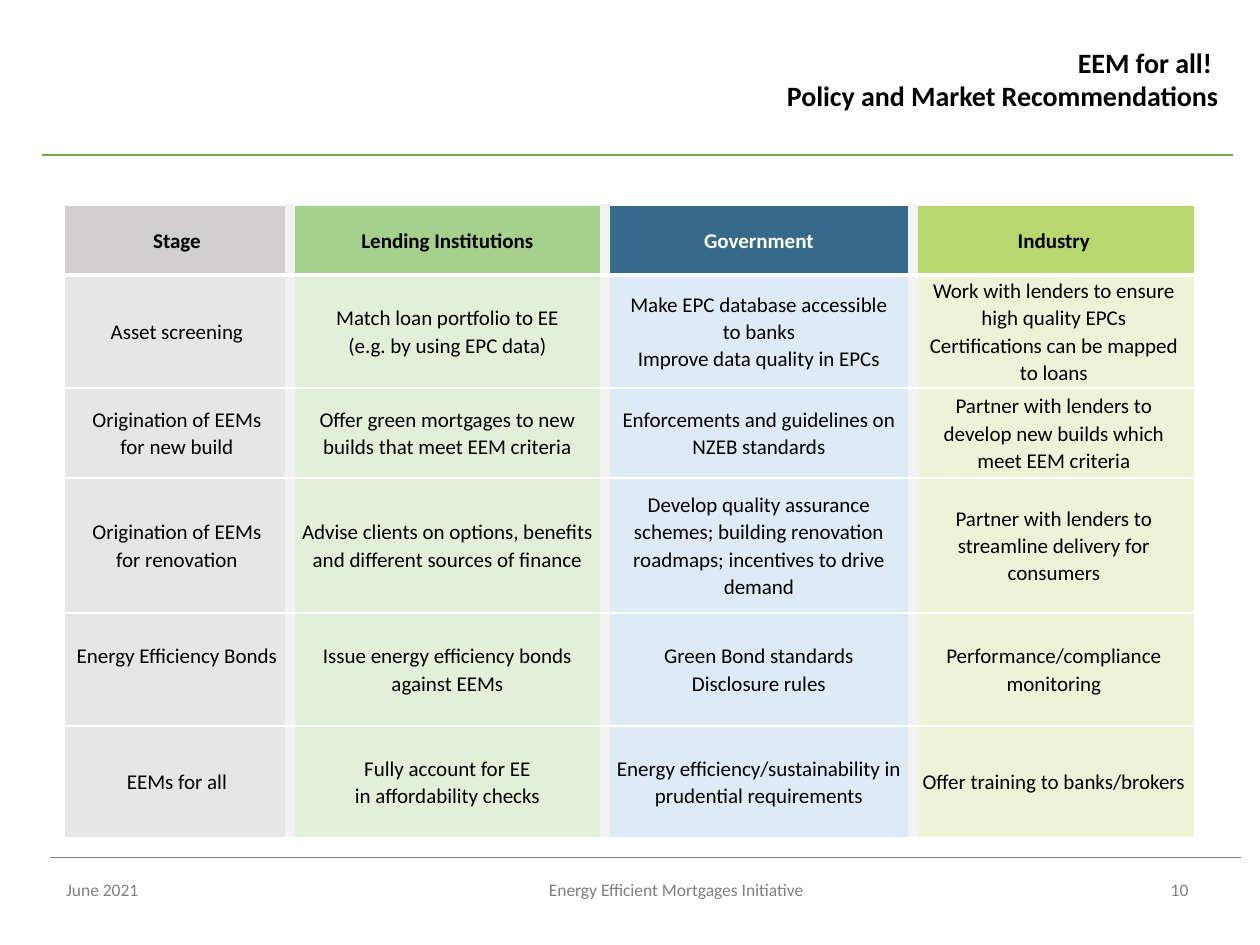
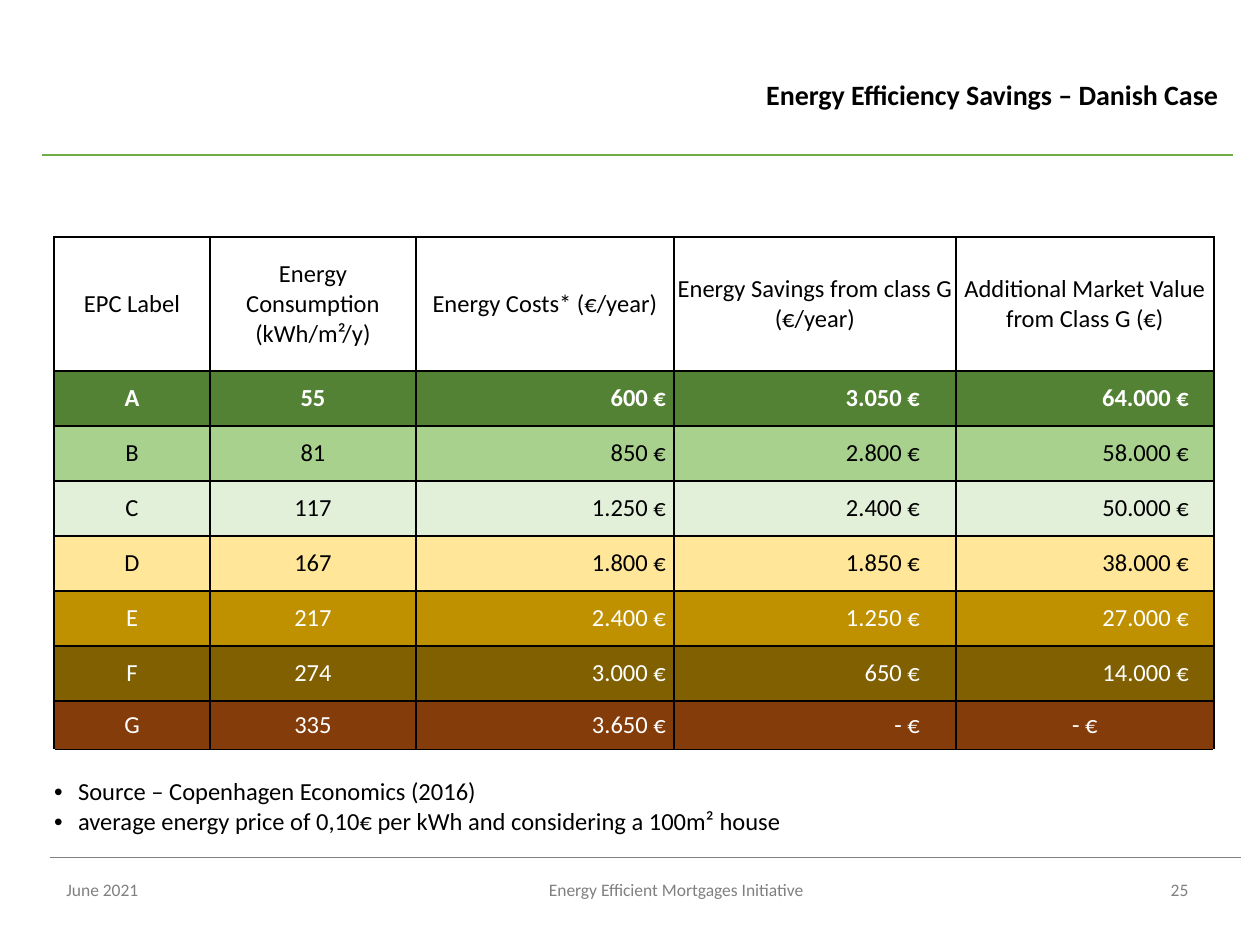
from lxml.etree import SubElement
from pptx import Presentation
from pptx.dml.color import RGBColor
from pptx.enum.shapes import MSO_CONNECTOR
from pptx.enum.text import MSO_ANCHOR as Anchor, PP_ALIGN as Align
from pptx.oxml.ns import qn
from pptx.util import Emu, Pt

BLACK = RGBColor(0x00, 0x00, 0x00)
WHITE = RGBColor(0xFF, 0xFF, 0xFF)
GREY = RGBColor(0x80, 0x80, 0x80)
GUTTER = RGBColor(0xF2, 0xF2, 0xF2)
GREEN = RGBColor(0x70, 0xAD, 0x47)
FONT = "Calibri"
PX_PER_INCH = 126

# Shared frame: (x1, x2, y, colour, points) and (text, left, width, alignment)
RULES = [(42, 1233, 155, GREEN, 1), (50, 1241, 857, GREY, 0.5)]
DATE = ("June 2021", 54, 142, Align.LEFT)
INITIATIVE = ("Energy Efficient Mortgages Initiative", 357, 638, Align.CENTER)
NUMBER_LEFT, NUMBER_WIDTH = 1144, 71
FOOTER_TOP, FOOTER_HEIGHT = 873, 50

# Recommendations: (heading, width, heading fill, heading colour, body fill, opacity %)
ACTORS = [
    ("Stage", 226, RGBColor(0xD0, 0xCE, 0xCE), BLACK, RGBColor(0xE7, 0xE6, 0xE6), 100),
    ("Lending Institutions", 315, RGBColor(0xA8, 0xD0, 0x8D), BLACK,
     RGBColor(0xE2, 0xF0, 0xD9), 100),
    ("Government", 308, RGBColor(0x37, 0x6A, 0x88), WHITE, RGBColor(0xDE, 0xEB, 0xF7), 100),
    ("Industry", 282, RGBColor(0xB8, 0xD7, 0x6D), BLACK, RGBColor(0xC1, 0xD6, 0x71), 27),
]
BONDS = "Energy Efficiency Bonds"
STAGES = [
    ("Asset screening",
     "Match loan portfolio to EE\n(e.g. by using EPC data)",
     "Make EPC database accessible\nto banks\nImprove data quality in EPCs",
     "Work with lenders to ensure high quality EPCs\nCertifications can be mapped to loans"),
    ("Origination of EEMs\nfor new build",
     "Offer green mortgages to new builds that meet EEM criteria",
     "Enforcements and guidelines on NZEB standards",
     "Partner with lenders to develop new builds which meet EEM criteria"),
    ("Origination of EEMs\nfor renovation",
     "Advise clients on options, benefits and different sources of finance",
     "Develop quality assurance schemes; building renovation roadmaps; "
     "incentives to drive demand",
     "Partner with lenders to streamline delivery for consumers"),
    (BONDS,
     "Issue energy efficiency bonds against EEMs",
     "Green Bond standards\nDisclosure rules",
     "Performance/compliance monitoring"),
    ("EEMs for all",
     "Fully account for EE\nin affordability checks",
     "Energy efficiency/sustainability in prudential requirements",
     "Offer training to banks/brokers"),
]
STAGE_HEIGHTS = [70, 113, 90, 135, 113, 112]

# Savings: (heading, width, alignment, right inset)
MEASURES = [
    ("EPC Label", 156, Align.CENTER, 0),
    ("Energy Consumption (kWh/m²/y)", 206, Align.CENTER, 0),
    ("Energy Costs* (€/year)", 258, Align.RIGHT, 8),
    ("Energy Savings from class G (€/year)", 282, Align.RIGHT, 36),
    ("Additional Market Value from Class G (€)", 258, Align.RIGHT, 25),
]
EPC_CLASSES = [
    (RGBColor(0x54, 0x82, 0x35), WHITE, ("A", "55", "600 €", "3.050 €", "64.000 €")),
    (RGBColor(0xA9, 0xD1, 0x8E), BLACK, ("B", "81", "850 €", "2.800 €", "58.000 €")),
    (RGBColor(0xE2, 0xF0, 0xD9), BLACK, ("C", "117", "1.250 €", "2.400 €", "50.000 €")),
    (RGBColor(0xFF, 0xE6, 0x99), BLACK, ("D", "167", "1.800 €", "1.850 €", "38.000 €")),
    (RGBColor(0xBF, 0x90, 0x00), WHITE, ("E", "217", "2.400 €", "1.250 €", "27.000 €")),
    (RGBColor(0x80, 0x60, 0x00), WHITE, ("F", "274", "3.000 €", "650 €", "14.000 €")),
    (RGBColor(0x84, 0x3C, 0x0B), WHITE, ("G", "335", "3.650 €", "- €", "- €")),
]
NOTES = ("Source – Copenhagen Economics (2016)\n"
         "average energy price of 0,10€ per kWh and considering a 100m² house")
CLASS_HEIGHTS = [134] + [55] * 6 + [49, 87]
NOTE_INDENT = 24


def px(n):
    return Emu(round(n * 914400 / PX_PER_INCH))


def write(frame, text, size, colour, align, bold=False, spacing=None):
    frame.text = text
    for paragraph in frame.paragraphs:
        paragraph.alignment = align
        if spacing:
            paragraph.line_spacing = spacing
        for run in paragraph.runs:
            font = run.font
            font.name, font.size, font.bold = FONT, Pt(size), bold
            font.color.rgb = colour


def add_framed_slide(deck, title, title_top, title_height, number):
    """Add a slide with its title, the two rules and the footer."""
    slide = deck.slides.add_slide(deck.slide_layouts[5])
    for x1, x2, y, colour, points in RULES:
        rule = slide.shapes.add_connector(MSO_CONNECTOR.STRAIGHT, px(x1), px(y), px(x2), px(y))
        rule.line.color.rgb, rule.line.width = colour, Pt(points)
        SubElement(rule._element.spPr, qn("a:effectLst"))

    heading = slide.shapes.title
    heading.left, heading.top = px(357), px(title_top)
    heading.width, heading.height = px(874), px(title_height)
    heading.text_frame.vertical_anchor = Anchor.MIDDLE
    write(heading.text_frame, title, 16, BLACK, Align.RIGHT, bold=True)

    page = (str(number), NUMBER_LEFT, NUMBER_WIDTH, Align.CENTER)
    for text, left, width, align in (DATE, INITIATIVE, page):
        footer = slide.shapes.add_textbox(px(left), px(FOOTER_TOP), px(width), px(FOOTER_HEIGHT))
        footer.text_frame.word_wrap = True
        write(footer.text_frame, text, 10, GREY, align)
    return slide


def add_plain_table(slide, left, top, widths, heights):
    table = slide.shapes.add_table(len(heights), len(widths), px(left), px(top),
                                   px(sum(widths)), px(sum(heights))).table
    table.first_row = table.horz_banding = False
    for column, width in zip(table.columns, widths):
        column.width = px(width)
    for row, height in zip(table.rows, heights):
        row.height = px(height)
    return table


def style_cell(cell, fill=None, opacity=100, anchor=Anchor.MIDDLE, side=0, right=None):
    """Set fill, anchor and side insets; side and right are px."""
    cell.vertical_anchor = anchor
    cell.margin_top = cell.margin_bottom = 0
    cell.margin_left = px(side)
    cell.margin_right = px(side if right is None else right)
    if fill is None:
        cell.fill.background()
        return
    cell.fill.solid()
    cell.fill.fore_color.rgb = fill
    if opacity < 100:
        colour = cell._tc.tcPr.find(qn("a:solidFill"))[0]
        SubElement(colour, qn("a:alpha"), val=str(opacity * 1000))


def set_borders(cell, left, right, top, bottom):
    """Each border is (colour, points); borders precede the fill."""
    properties = cell._tc.get_or_add_tcPr()
    sides = zip("LRTB", (left, right, top, bottom))
    for position, (side, (colour, points)) in enumerate(sides):
        line = SubElement(properties, qn("a:ln" + side), w=str(Pt(points)))
        solid = SubElement(line, qn("a:solidFill"))
        SubElement(solid, qn("a:srgbClr"), val=str(colour))
        properties.insert(position, line)


def add_recommendations(deck):
    slide = add_framed_slide(deck, "EEM for all! \nPolicy and Market Recommendations", 3, 152, 10)
    table = add_plain_table(slide, 64, 205, [actor[1] for actor in ACTORS], STAGE_HEIGHTS)
    thin, thick, gutter = (WHITE, 1), (WHITE, 2.25), (GUTTER, 6)
    rows = [[actor[0] for actor in ACTORS]] + STAGES
    for r, texts in enumerate(rows):
        for c, (text, actor) in enumerate(zip(texts, ACTORS)):
            _, _, head_fill, head_colour, body_fill, opacity = actor
            cell = table.cell(r, c)
            is_head = r == 0
            if is_head:
                style_cell(cell, head_fill, side=9)
            else:
                style_cell(cell, body_fill, opacity, side=9)
            if text == BONDS:
                cell.margin_bottom = px(27)
            write(cell.text_frame, text, 12, head_colour if is_head else BLACK,
                  Align.CENTER, bold=is_head, spacing=1.07)
            set_borders(cell,
                        left=gutter if c else thin,
                        right=gutter if c < len(ACTORS) - 1 else thin,
                        top=thick if r == 1 else thin,
                        bottom=thick if is_head else thin)


def add_savings(deck):
    slide = add_framed_slide(deck, "Energy Efficiency Savings – Danish Case", 34, 121, 25)
    table = add_plain_table(slide, 54, 237, [measure[1] for measure in MEASURES], CLASS_HEIGHTS)
    grid, blank = (BLACK, 1), (WHITE, 1)
    last = len(CLASS_HEIGHTS) - 1
    for c, (heading, _, align, inset) in enumerate(MEASURES):
        head = table.cell(0, c)
        style_cell(head)
        write(head.text_frame, heading, 14, BLACK, Align.CENTER)
        set_borders(head, grid, grid, grid, grid)
        for r, (fill, colour, values) in enumerate(EPC_CLASSES, 1):
            cell = table.cell(r, c)
            centred = values[0] == "G" and c == len(MEASURES) - 1
            style_cell(cell, fill, right=0 if centred else inset)
            write(cell.text_frame, values[c], 14, colour,
                  Align.CENTER if centred else align, bold=values[0] == "A")
            set_borders(cell, grid, grid, grid, grid)
        style_cell(table.cell(last, c), anchor=Anchor.BOTTOM)
        set_borders(table.cell(last, c), blank, blank, grid, blank)

    notes = table.cell(last, 0)
    notes.merge(table.cell(last, len(MEASURES) - 1))
    write(notes.text_frame, NOTES, 14, BLACK, Align.LEFT)
    for paragraph in notes.text_frame.paragraphs:
        properties = paragraph._p.get_or_add_pPr()
        properties.set("marL", str(px(NOTE_INDENT)))
        properties.set("indent", str(-px(NOTE_INDENT)))
        SubElement(properties, qn("a:buFont"), typeface="Arial")
        SubElement(properties, qn("a:buChar"), char="•")


def main():
    deck = Presentation()
    deck.slide_width, deck.slide_height = px(1260), px(945)
    add_recommendations(deck)
    add_savings(deck)
    deck.save("out.pptx")


if __name__ == "__main__":
    main()
